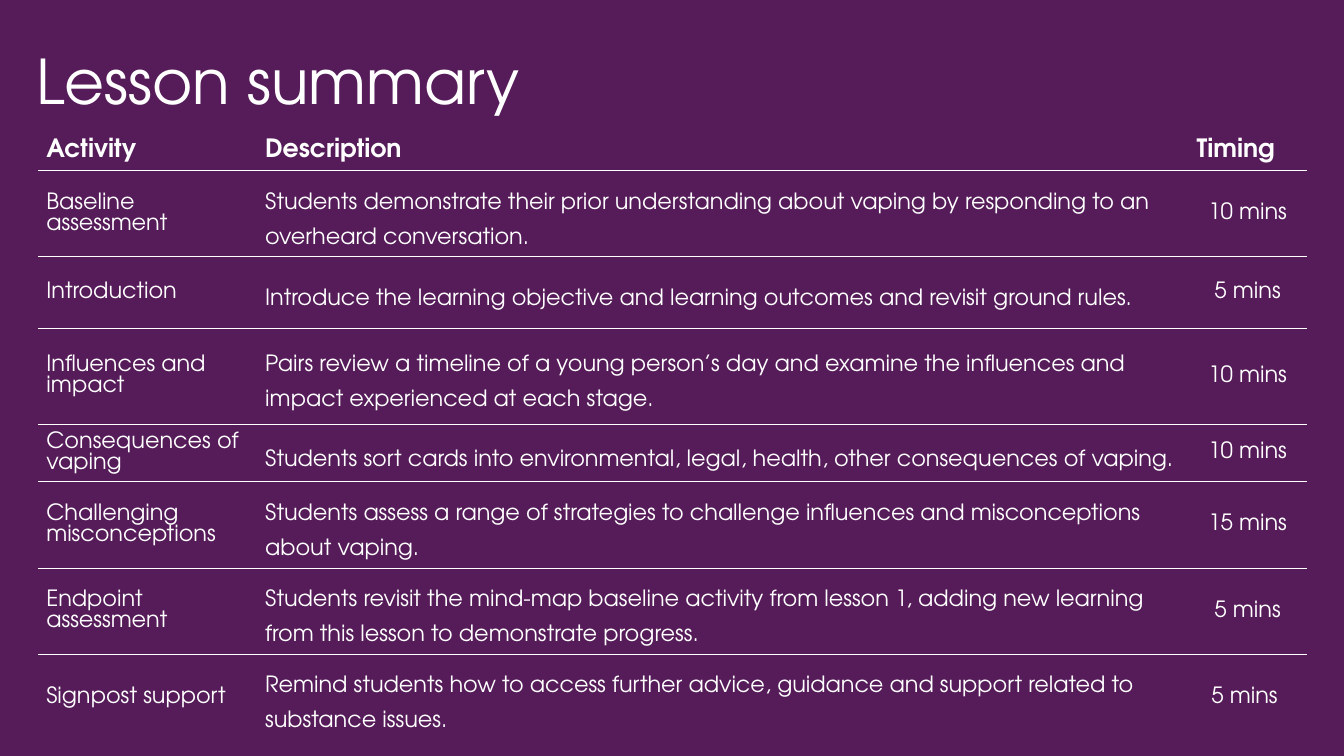
from dataclasses import dataclass

from lxml import etree
from pptx import Presentation
from pptx.dml.color import RGBColor
from pptx.enum import text
from pptx.oxml import ns
from pptx.util import Inches, Pt


@dataclass(frozen=True)
class Theme:
    font: str = "TeX Gyre Adventor"
    background: RGBColor = RGBColor(0x55, 0x1C, 0x59)
    ink: str = "FFFFFF"
    title: Pt = Pt(44)
    header: Pt = Pt(18)
    body: Pt = Pt(16)
    rule: Pt = Pt(0.75)


theme = Theme()
PLAIN_TABLE_STYLE = "{2D5ABB26-0587-4C30-8999-92F81FD0307C}"


def add_text(paragraph, words, size, bold=False):
    run = paragraph.add_run()
    run.text = words
    run.font.name = theme.font
    run.font.size = size
    run.font.bold = bold
    run.font.color.rgb = RGBColor.from_string(theme.ink)


def add_rule(cell, side):
    line = etree.SubElement(cell._tc.get_or_add_tcPr(), ns.qn(f"a:{side}"), w=str(theme.rule))
    fill = etree.SubElement(line, ns.qn("a:solidFill"))
    etree.SubElement(fill, ns.qn("a:srgbClr"), val=theme.ink)


# Slide and background
presentation = Presentation()
presentation.slide_width = Inches(13.33)
presentation.slide_height = Inches(7.5)
slide = presentation.slides.add_slide(presentation.slide_layouts[5])
slide.background.fill.solid()
slide.background.fill.fore_color.rgb = theme.background

# Title
title = slide.shapes.title
title.left, title.top = Inches(0.26), Inches(0.43)
title.width, title.height = Inches(11.17), Inches(0.82)
title.text_frame.auto_size = text.MSO_AUTO_SIZE.NONE
title.text_frame.vertical_anchor = text.MSO_ANCHOR.MIDDLE
paragraph = title.text_frame.paragraphs[0]
paragraph.alignment = text.PP_ALIGN.LEFT
paragraph.line_spacing = 0.9
add_text(paragraph, "Lesson summary", theme.title)

# Lesson plan: row height, activity, description, timing
rows = [
    (0.39, "Activity", "Description", "Timing"),
    (0.85, "Baseline assessment",
     "Students demonstrate their prior understanding about vaping by responding to an "
     "overheard conversation.", "10 mins"),
    (0.71, "Introduction",
     "Introduce the learning objective and learning outcomes and revisit ground rules.",
     "5 mins"),
    (0.95, "Influences and impact",
     "Pairs review a timeline of a young person’s day and examine the influences and "
     "impact experienced at each stage.", "10 mins"),
    (0.57, "Consequences of vaping",
     "Students sort cards into environmental, legal, health, other consequences of vaping.",
     "10 mins"),
    (0.85, "Challenging misconceptions",
     "Students assess a range of strategies to challenge influences and misconceptions "
     "about vaping.", "15 mins"),
    (0.85, "Endpoint assessment",
     "Students revisit the mind-map baseline activity from lesson 1, adding new learning "
     "from this lesson to demonstrate progress.", "5 mins"),
    (0.85, "Signpost support",
     "Remind students how to access further advice, guidance and support related to "
     "substance issues.", "5 mins "),
]
column_widths = [2.09, 9.32, 1.17]

# Table
frame = slide.shapes.add_table(len(rows), len(column_widths), Inches(0.38), Inches(1.3),
                               Inches(sum(column_widths)), Inches(sum(row[0] for row in rows)))
table = frame.table
table.first_row = table.horz_banding = False
table._tbl.tblPr.find(ns.qn("a:tableStyleId")).text = PLAIN_TABLE_STYLE
for column, width in zip(table.columns, column_widths):
    column.width = Inches(width)

for row_index, (height, *words) in enumerate(rows):
    table.rows[row_index].height = Inches(height)
    is_header = row_index == 0
    for column_index, entry in enumerate(words):
        cell = table.cell(row_index, column_index)
        cell.vertical_anchor = text.MSO_ANCHOR.MIDDLE
        cell.margin_left = Inches(0.16 if column_index == 1 else 0.08)
        cell.margin_right = cell.margin_top = cell.margin_bottom = Inches(0.08)

        # White rules between the rows only
        if not is_header:
            add_rule(cell, "lnT")
        if row_index < len(rows) - 1:
            add_rule(cell, "lnB")
        cell.fill.background()

        paragraph = cell.text_frame.paragraphs[0]
        if not is_header and column_index == 1:
            paragraph.line_spacing = Pt(25)
        if not is_header and column_index == 2:
            paragraph.alignment = text.PP_ALIGN.CENTER
        add_text(paragraph, entry, theme.header if is_header else theme.body, is_header)

presentation.save("out.pptx")
